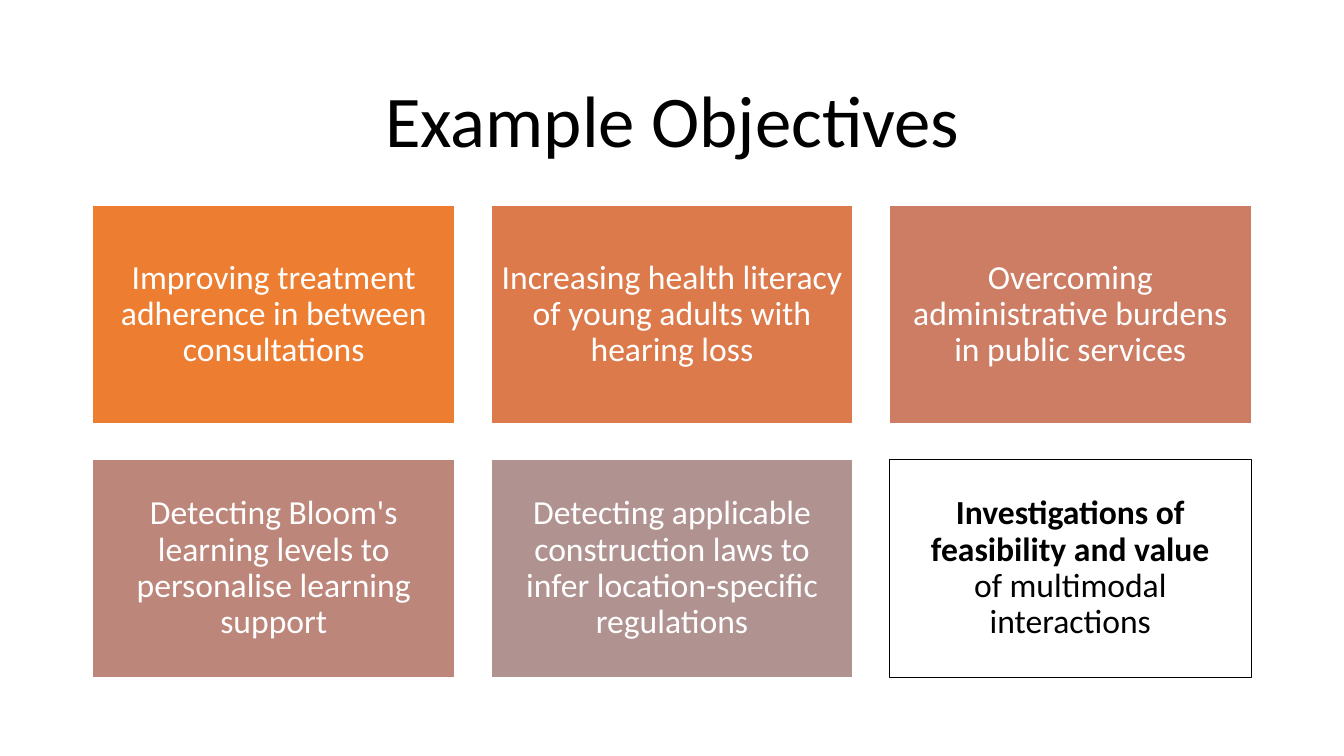
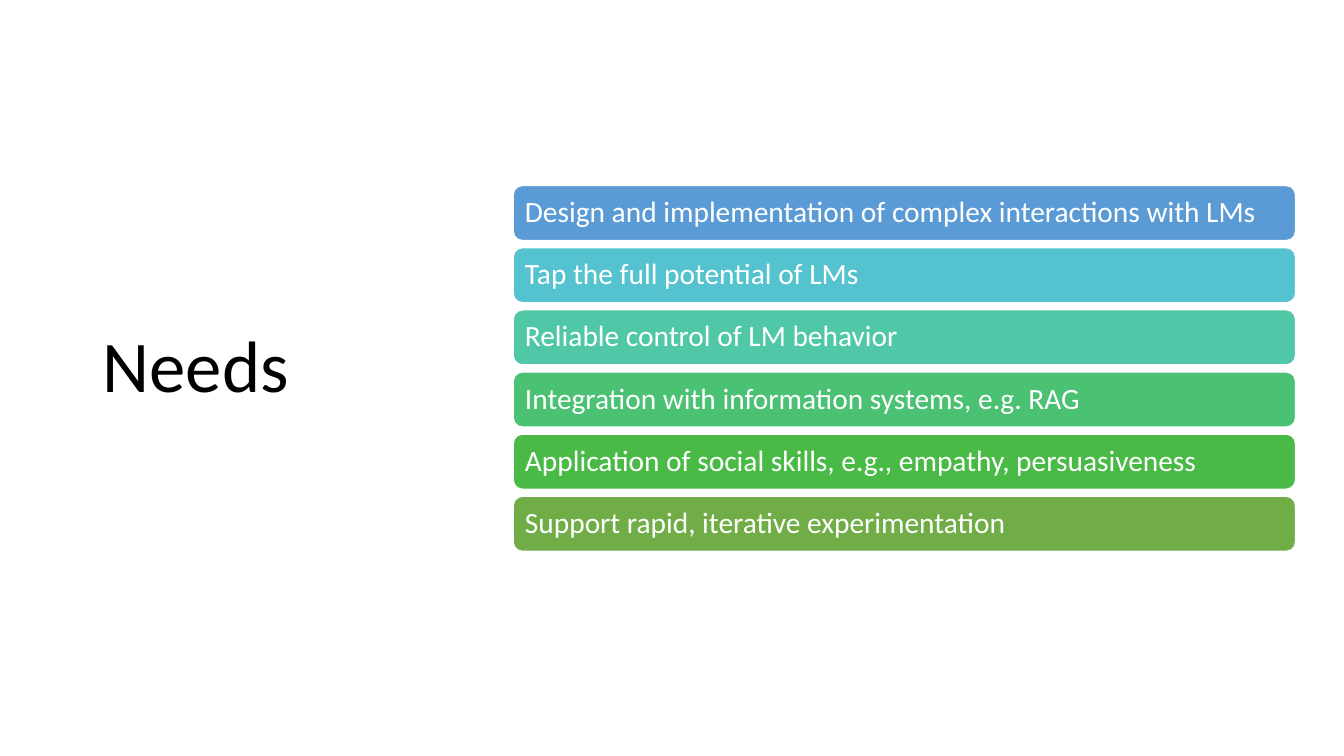
"""Build two slides: a grid of example objectives and a list of needs."""
from dataclasses import dataclass

from pptx import Presentation
from pptx.dml.color import RGBColor
from pptx.enum.shapes import MSO_SHAPE
from pptx.enum.text import MSO_ANCHOR, MSO_AUTO_SIZE, PP_ALIGN
from pptx.presentation import Presentation as Deck
from pptx.slide import Slide
from pptx.text.text import TextFrame
from pptx.util import Inches, Pt

RECTANGLE = MSO_SHAPE.RECTANGLE
ROUNDED = MSO_SHAPE.ROUNDED_RECTANGLE
MIDDLE = MSO_ANCHOR.MIDDLE
FIXED_SIZE = MSO_AUTO_SIZE.NONE
LEFT = PP_ALIGN.LEFT
CENTER = PP_ALIGN.CENTER
TITLE_ONLY = 5


@dataclass(frozen=True)
class Theme:
    """Colours, font and type sizes shared by the slides."""

    font: str = "Calibri"
    dark: str = "000000"
    light: str = "FFFFFF"
    title_size: float = 52
    card_size: float = 24
    bar_size: float = 21
    line_spacing: float = 0.9
    outline_width: float = 1


@dataclass(frozen=True)
class Area:
    """A rectangle measured in inches."""

    left: float
    top: float
    width: float
    height: float


@dataclass(frozen=True)
class Tile:
    """A filled shape with text and an optional bold opening line."""

    text: str
    fill: str
    ink: str = "FFFFFF"
    outline: str = "FFFFFF"
    lead: str = ""


@dataclass(frozen=True)
class TileStyle:
    """The outline shape and text setting common to a group of tiles."""

    shape: MSO_SHAPE
    size: float
    inset: float
    align: PP_ALIGN


THEME = Theme()
CARD_STYLE = TileStyle(RECTANGLE, THEME.card_size, 0.1, CENTER)
BAR_STYLE = TileStyle(ROUNDED, THEME.bar_size, 0.09, LEFT)

OBJECTIVES_TITLE = Area(0.92, 0.61, 11.5, 1.24)
OBJECTIVES_GRID = Area(0.92, 2.04, 11.49, 4.68)
CARD_COLUMNS = 3
CARD_GAP = 0.36
OBJECTIVES = [
    Tile("Improving treatment adherence in between consultations", "ED7D31"),
    Tile("Increasing health literacy of young adults with hearing loss", "DC7A4B"),
    Tile("Overcoming administrative burdens in public services", "CC7D64"),
    Tile("Detecting Bloom's learning levels to personalise learning support", "BD867B"),
    Tile(
        "Detecting applicable construction laws to infer location-specific regulations",
        "B09391",
    ),
    Tile(
        "of multimodal interactions",
        THEME.light,
        ink=THEME.dark,
        outline=THEME.dark,
        lead="Investigations of feasibility and value",
    ),
]

NEEDS_TITLE = Area(0.92, 0.61, 3.69, 6.09)
NEEDS_LIST = Area(5.09, 1.84, 7.76, 3.63)
BAR_GAP = 0.07
NEEDS = [
    Tile("Design and implementation of complex interactions with LMs", "5B9BD5"),
    Tile("Tap the full potential of LMs", "55C3CF"),
    Tile("Reliable control of LM behavior", "50C8A7"),
    Tile("Integration with information systems, e.g. RAG", "4BC174"),
    Tile("Application of social skills, e.g., empathy, persuasiveness", "4ABA46"),
    Tile("Support rapid, iterative experimentation", "70AD47"),
]


def format_text(frame: TextFrame, size: float, ink: str, align: PP_ALIGN) -> None:
    """Apply the shared paragraph and font settings to a text frame."""
    frame.word_wrap = True
    frame.auto_size = FIXED_SIZE
    frame.vertical_anchor = MIDDLE
    for para in frame.paragraphs:
        para.alignment = align
        para.line_spacing = THEME.line_spacing
        for span in para.runs:
            span.font.name = THEME.font
            span.font.size = Pt(size)
            span.font.color.rgb = RGBColor.from_string(ink)


def add_titled_page(deck: Deck, text: str, area: Area, align: PP_ALIGN) -> Slide:
    """Add a title-only slide and place its title."""
    page = deck.slides.add_slide(deck.slide_layouts[TITLE_ONLY])
    title = page.shapes.title
    title.left, title.top = Inches(area.left), Inches(area.top)
    title.width, title.height = Inches(area.width), Inches(area.height)
    title.text_frame.text = text
    format_text(title.text_frame, THEME.title_size, THEME.dark, align)
    return page


def add_tile(page: Slide, tile: Tile, area: Area, style: TileStyle) -> None:
    """Draw one tile with its text."""
    box = page.shapes.add_shape(
        style.shape,
        Inches(area.left),
        Inches(area.top),
        Inches(area.width),
        Inches(area.height),
    )
    box.shadow.inherit = False
    box.fill.solid()
    box.fill.fore_color.rgb = RGBColor.from_string(tile.fill)
    box.line.color.rgb = RGBColor.from_string(tile.outline)
    box.line.width = Pt(THEME.outline_width)
    frame = box.text_frame
    frame.margin_left = frame.margin_right = Inches(style.inset)
    frame.margin_top = frame.margin_bottom = Inches(style.inset)
    para = frame.paragraphs[0]
    para.text = tile.lead or tile.text
    if tile.lead:
        para.runs[0].font.bold = True
        para.add_line_break()
        para.add_run().text = tile.text
    format_text(frame, style.size, tile.ink, style.align)


def add_tile_grid(
    page: Slide,
    tiles: list[Tile],
    area: Area,
    columns: int,
    gap: float,
    style: TileStyle,
) -> None:
    """Fill an area row by row with equal tiles and equal gaps."""
    rows = -(-len(tiles) // columns)
    width = (area.width - gap * (columns - 1)) / columns
    height = (area.height - gap * (rows - 1)) / rows
    for index, tile in enumerate(tiles):
        row, column = divmod(index, columns)
        left = area.left + column * (width + gap)
        top = area.top + row * (height + gap)
        add_tile(page, tile, Area(left, top, width, height), style)


def main() -> None:
    """Build and save the deck."""
    deck = Presentation()
    deck.slide_width, deck.slide_height = Inches(13.33), Inches(7.5)

    page = add_titled_page(deck, "Example Objectives", OBJECTIVES_TITLE, CENTER)
    add_tile_grid(page, OBJECTIVES, OBJECTIVES_GRID, CARD_COLUMNS, CARD_GAP, CARD_STYLE)

    page = add_titled_page(deck, "Needs", NEEDS_TITLE, LEFT)
    add_tile_grid(page, NEEDS, NEEDS_LIST, 1, BAR_GAP, BAR_STYLE)

    deck.save("out.pptx")


if __name__ == "__main__":
    main()
